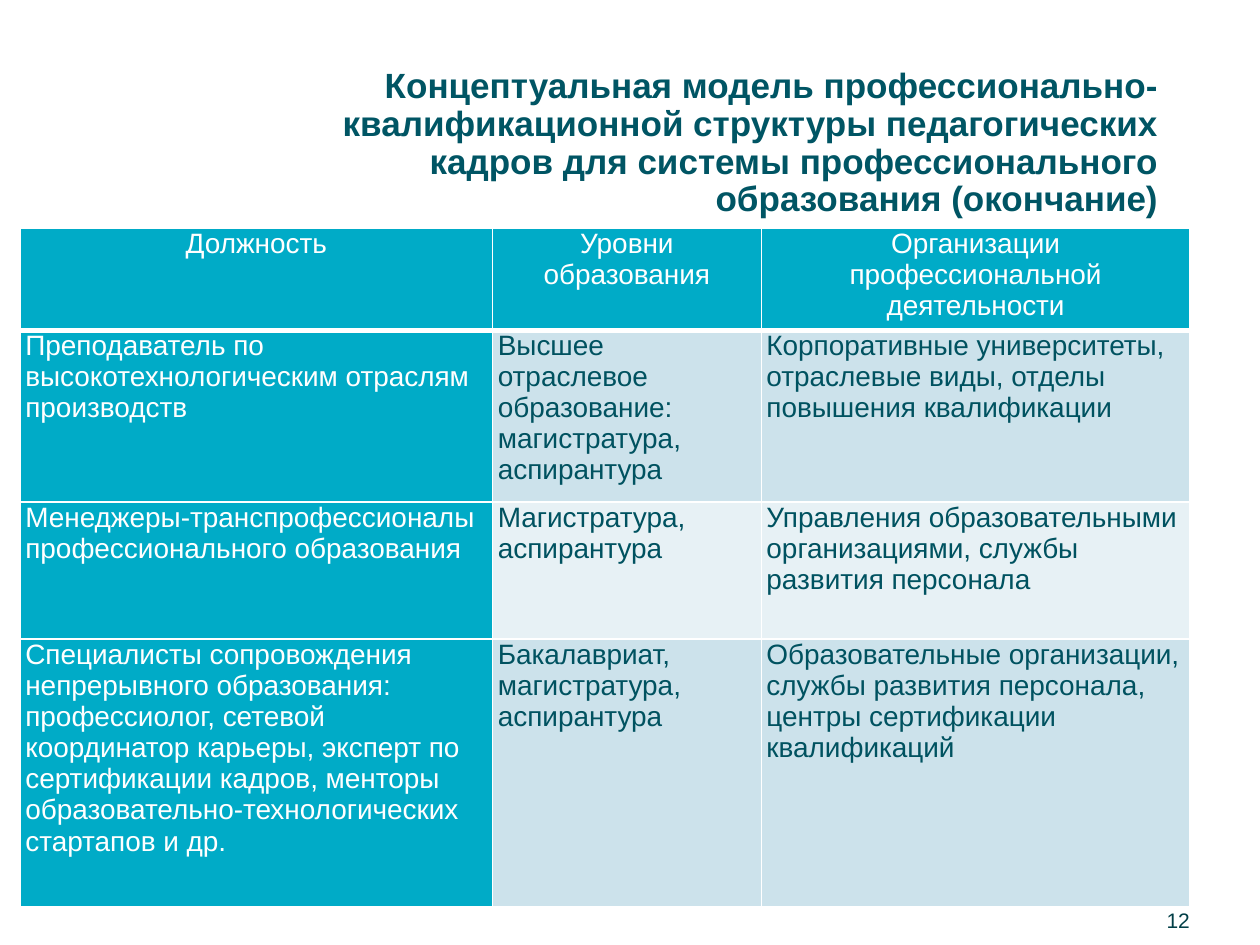
from lxml import etree
from pptx import Presentation
from pptx.dml.color import RGBColor
from pptx.enum import text
from pptx.oxml import ns
from pptx.util import Pt

COLORS = {
    "title": "005564", "number": "023F47", "body": "005260", "white": "FFFFFF",
    "accent": "00ABC7", "band": "CCE2EB", "light": "E7F1F5",
}
COLUMNS = [270, 153.5, 245]
HEIGHTS = [58.5, 98, 78.5, 153]
ROWS = [
    ["Должность", "Уровни образования", "Организации профессиональной деятельности"],
    ["Преподаватель по высокотехнологическим отраслям производств",
     "Высшее отраслевое образование: магистратура, аспирантура",
     "Корпоративные университеты, отраслевые виды, отделы повышения квалификации"],
    ["Менеджеры-транспрофессионалы профессионального образования",
     "Магистратура, аспирантура",
     "Управления образовательными организациями, службы развития персонала"],
    ["Специалисты сопровождения непрерывного образования: профессиолог, сетевой "
     "координатор карьеры, эксперт по сертификации кадров, менторы "
     "образовательно-технологических стартапов и др.",
     "Бакалавриат, магистратура, аспирантура",
     "Образовательные организации, службы развития персонала, центры сертификации "
     "квалификаций"],
]


def apply(target, values):
    for name, value in values.items():
        setattr(target, name, value)


def write(frame, words, size, color, align, bold=False, **paragraph_format):
    frame.text = words
    paragraph = frame.paragraphs[0]
    apply(paragraph, {"alignment": align, **paragraph_format})
    font = paragraph.runs[0].font
    apply(font, {"name": "Arial", "size": Pt(size), "bold": bold})
    font.color.rgb = RGBColor.from_string(COLORS[color])


def place(shape, box):
    apply(shape, dict(zip(("left", "top", "width", "height"), map(Pt, box))))


def add_title(slide, box):
    title = slide.shapes.title
    place(title, box)
    apply(title.text_frame, {
        "word_wrap": True, "auto_size": text.MSO_AUTO_SIZE.NONE,
        "vertical_anchor": text.MSO_ANCHOR.BOTTOM, "margin_left": Pt(50),
    })
    write(title.text_frame,
          "Концептуальная модель профессионально-квалификационной структуры "
          "педагогических кадров для системы профессионального образования (окончание)",
          20, "title", text.PP_ALIGN.RIGHT, bold=True, line_spacing=0.9, space_before=Pt(0))


def add_borders(cell, bottom):
    properties = cell._tc.get_or_add_tcPr()
    for side, width in {"lnL": 1, "lnR": 1, "lnT": 1, "lnB": bottom}.items():
        line = etree.SubElement(properties, ns.qn(f"a:{side}"), w=str(Pt(width)))
        fill = etree.SubElement(line, ns.qn("a:solidFill"))
        etree.SubElement(fill, ns.qn("a:srgbClr"), val=COLORS["white"])


def add_positions(slide, box):
    table = slide.shapes.add_table(len(ROWS), len(COLUMNS), *map(Pt, box)).table
    for column, width in zip(table.columns, COLUMNS):
        column.width = Pt(width)
    for r, (row, height) in enumerate(zip(ROWS, HEIGHTS)):
        table.rows[r].height = Pt(height)
        for c, words in enumerate(row):
            cell = table.cell(r, c)
            header = r == 0
            accented = header or c == 0
            apply(cell, {"margin_left": Pt(3), "margin_right": Pt(3),
                         "margin_top": 0, "margin_bottom": 0})
            add_borders(cell, 3 if header else 1)
            cell.fill.solid()
            shade = "accent" if accented else "band" if r % 2 else "light"
            cell.fill.fore_color.rgb = RGBColor.from_string(COLORS[shade])
            write(cell.text_frame, words, 16, "white" if accented else "body",
                  text.PP_ALIGN.CENTER if header else text.PP_ALIGN.LEFT)


def add_number(slide, box):
    frame = slide.shapes.add_textbox(*map(Pt, box)).text_frame
    apply(frame, {"word_wrap": True, "vertical_anchor": text.MSO_ANCHOR.MIDDLE})
    write(frame, "12", 12, "number", text.PP_ALIGN.RIGHT)


def main():
    deck = Presentation()
    apply(deck, {"slide_width": Pt(720), "slide_height": Pt(540)})
    slide = deck.slides.add_slide(deck.slide_layouts[5])
    add_number(slide, (625, 511, 62, 29))
    add_title(slide, (112, 34, 557, 95))
    add_positions(slide, (11.5, 130.3, sum(COLUMNS), sum(HEIGHTS)))
    deck.save("out.pptx")


if __name__ == "__main__":
    main()
